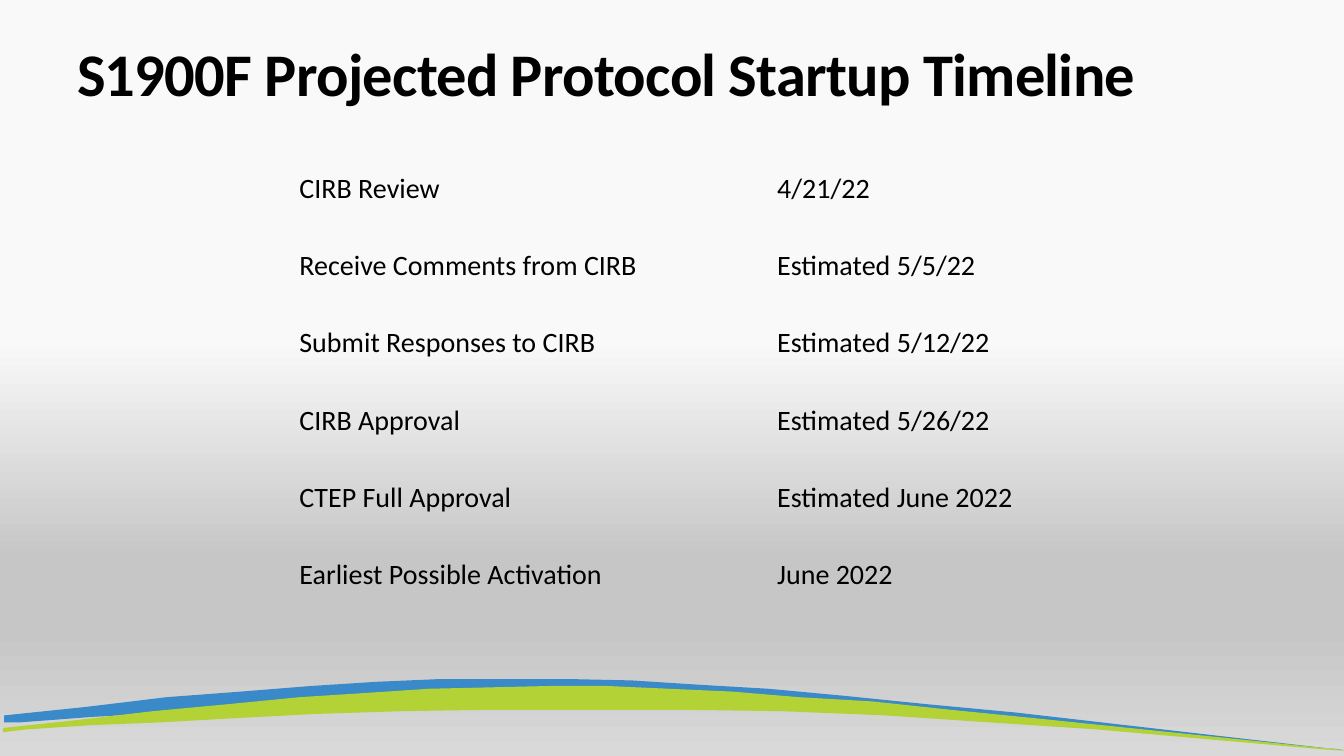
from dataclasses import dataclass

from lxml import etree
from pptx import Presentation
from pptx.dml.color import RGBColor
from pptx.enum.text import MSO_ANCHOR
from pptx.oxml.ns import qn
from pptx.slide import Slide
from pptx.table import _Cell
from pptx.text.text import _Paragraph
from pptx.util import Pt

BOTTOM = MSO_ANCHOR.BOTTOM

BLACK = RGBColor(0x00, 0x00, 0x00)
BLUE = RGBColor(0x3A, 0x89, 0xC9)
GREEN = RGBColor(0xB2, 0xD2, 0x35)
PALE = RGBColor(0xF9, 0xF9, 0xF9)
GREY = RGBColor(0xC6, 0xC6, 0xC6)
LIGHT = RGBColor(0xD9, 0xD9, 0xD9)

FONT = "Calibri"
NO_STYLE_NO_GRID = "{2D5ABB26-0587-4C30-8999-92F81FD0307C}"
ROW_HEIGHT = 44.64


@dataclass
class GradientStop:
    percent: int
    color: RGBColor


@dataclass
class Swoosh:
    color: RGBColor
    upper: list[tuple[float, float]]  # left to right
    lower: list[tuple[float, float]]  # right to left


@dataclass
class Milestone:
    step: str
    date: str


BACKGROUND = [GradientStop(45, PALE), GradientStop(74, GREY),
              GradientStop(83, GREY), GradientStop(100, LIGHT)]

SWOOSHES = [
    Swoosh(
        BLUE,
        [(2.9, 511.2), (61.2, 504.7), (118.8, 498.2), (172.1, 493.9),
         (221.8, 489.6), (269.3, 486.7), (315.4, 485.3), (360, 484.6),
         (404.6, 484.6), (450.7, 486), (498.2, 488.9), (549.4, 492.5),
         (603.4, 496.8), (662.4, 502.6), (726.5, 509), (961.2, 535.7)],
        [(954.7, 535), (940.3, 533.5), (773.3, 518.4), (692.6, 511.9),
         (613.4, 507.6), (535.7, 504.7), (460.1, 503.3), (386.6, 502.6),
         (316.1, 503.3), (248.4, 504.7), (184.3, 506.2), (123.1, 509),
         (67, 511.9), (14.4, 515.5), (2.9, 516.2)],
    ),
    Swoosh(
        GREEN,
        [(2.2, 519.8), (49, 514.8), (108.7, 508.3), (163.4, 503.3),
         (213.8, 498.2), (261.4, 494.6), (306, 492.5), (349.2, 491),
         (391.7, 490.3), (434.2, 490.3), (478.1, 491.8), (522.7, 493.9),
         (571, 497.5), (622.8, 501.1), (679, 506.9), (739.4, 512.6),
         (961.9, 536.4)],
        [(955.4, 535.7), (941.8, 535), (783.4, 520.6), (707, 515.5),
         (632.2, 511.2), (558.7, 508.3), (486.7, 506.9), (416.9, 506.9),
         (349.9, 506.9), (285.8, 508.3), (224.6, 509.8), (167.8, 512.6),
         (113.8, 515.5), (64.8, 518.4), (19.4, 521.3), (2.2, 522.7)],
    ),
]

MILESTONES = [
    Milestone("CIRB Review", "4/21/22"),
    Milestone("Receive Comments from CIRB", "Estimated 5/5/22"),
    Milestone("Submit Responses to CIRB", "Estimated 5/12/22"),
    Milestone("CIRB Approval", "Estimated 5/26/22"),
    Milestone("CTEP Full Approval", "Estimated June 2022"),
    Milestone("Earliest Possible Activation", "June 2022"),
]


def set_background(s: Slide, stops: list[GradientStop]) -> None:
    fill = s.background.fill
    fill.gradient()
    fill.gradient_angle = 270
    gs_list = next(s.element.iter(qn("a:gsLst")))
    for gs in list(gs_list):
        gs_list.remove(gs)
    for stop in stops:
        gs = etree.SubElement(gs_list, qn("a:gs"), pos=str(stop.percent * 1000))
        etree.SubElement(gs, qn("a:srgbClr"), val=str(stop.color))


def add_swoosh(s: Slide, swoosh: Swoosh) -> None:
    start, *rest = swoosh.upper + swoosh.lower
    builder = s.shapes.build_freeform(*start, scale=Pt(1))
    builder.add_line_segments(rest, close=True)
    sp = builder.convert_to_shape()
    sp.shadow.inherit = False
    sp.fill.solid()
    sp.fill.fore_color.rgb = swoosh.color
    sp.line.fill.background()


def write(p: _Paragraph, text: str, size: float, spacing: float,
          bold: bool = False) -> None:
    p.text = text
    p.line_spacing = spacing
    font = p.runs[0].font
    font.name = FONT
    font.size = Pt(size)
    font.bold = bold
    font.color.rgb = BLACK


def add_title(s: Slide, text: str) -> None:
    sp = s.shapes.add_textbox(Pt(48), Pt(13.68), Pt(828), Pt(67.68))
    tf = sp.text_frame
    tf.word_wrap = True
    tf.vertical_anchor = BOTTOM
    p = tf.paragraphs[0]
    write(p, text, 43.2, 0.85, bold=True)
    p.runs[0].font._element.set("spc", "-50")


def fill_cell(cell: _Cell, text: str) -> None:
    cell.fill.background()
    write(cell.text_frame.paragraphs[0], text, 20, 2.0)


def add_timeline(s: Slide, milestones: list[Milestone]) -> None:
    rows = len(milestones)
    frame = s.shapes.add_table(rows, 2, Pt(206.64), Pt(94.32),
                               Pt(527.76), Pt(ROW_HEIGHT * rows))
    next(frame.element.iter(qn("a:tableStyleId"))).text = NO_STYLE_NO_GRID
    table = frame.table
    table.first_row = False
    table.horz_banding = False
    table.columns[0].width = Pt(341.28)
    table.columns[1].width = Pt(186.48)
    for i, milestone in enumerate(milestones):
        table.rows[i].height = Pt(ROW_HEIGHT)
        fill_cell(table.cell(i, 0), milestone.step)
        fill_cell(table.cell(i, 1), milestone.date)


def main() -> None:
    prs = Presentation()
    prs.slide_width = Pt(960)
    prs.slide_height = Pt(540)
    s = prs.slides.add_slide(prs.slide_layouts[6])

    # Background and bottom curves
    set_background(s, BACKGROUND)
    for swoosh in SWOOSHES:
        add_swoosh(s, swoosh)

    # Title and timeline
    add_title(s, "S1900F Projected Protocol Startup Timeline")
    add_timeline(s, MILESTONES)

    prs.save("out.pptx")


if __name__ == "__main__":
    main()
